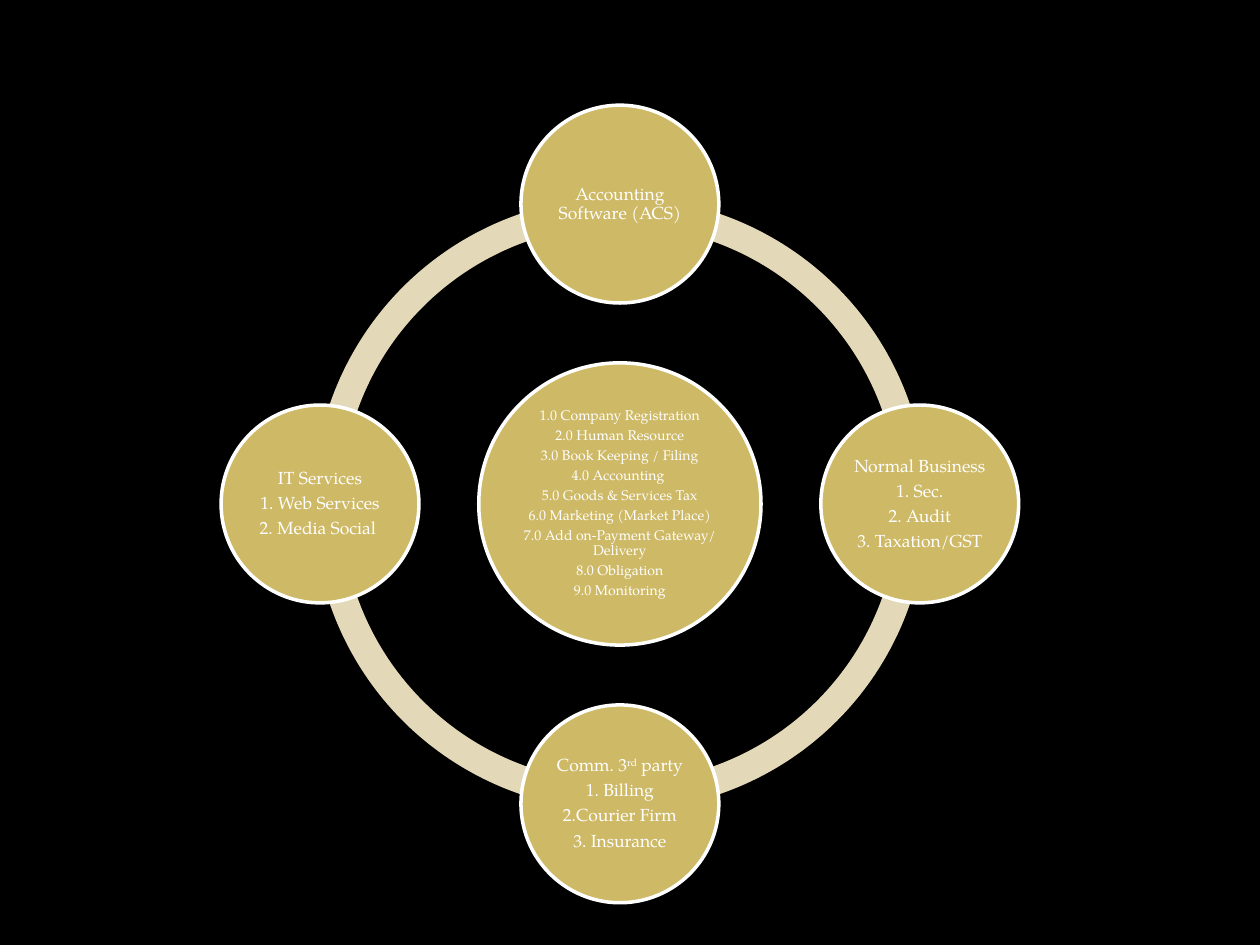
from math import cos, radians, sin

from pptx import Presentation
from pptx.dml.color import RGBColor
from pptx.enum.shapes import MSO_SHAPE
from pptx.enum.text import MSO_ANCHOR, PP_ALIGN
from pptx.util import Inches, Pt

OVAL, ARC = MSO_SHAPE.OVAL, MSO_SHAPE.BLOCK_ARC
MIDDLE, CENTER = MSO_ANCHOR.MIDDLE, PP_ALIGN.CENTER

COLORS = {"bg": "000000", "ring": "E3D9B8", "node": "CEB966", "white": "FFFFFF"}
FONT = "TeX Gyre Pagella"
CX, CY = 4.92, 4.0
ORBIT, RING_SIZE, RING_WIDTH = 2.38, 4.87, 0.046
HUB_SIZE, NODE_SIZE = 2.24, 1.57
QUARTER = 54

HUB_LINES = [
    "1.0 Company Registration",
    "2.0 Human Resource",
    "3.0 Book Keeping / Filing",
    "4.0 Accounting ",
    "5.0 Goods & Services Tax",
    "6.0 Marketing (Market Place)",
    "7.0 Add on-Payment Gateway/ Delivery",
    "8.0 Obligation",
    "9.0 Monitoring",
]
NODES = [
    (-90, ["Accounting Software (ACS)"]),
    (0, ["Normal Business", "1. Sec.", "2. Audit", "3. Taxation/GST"]),
    (90, [("Comm. 3", "rd", " party"), "1. Billing", "2.Courier Firm", "3. Insurance"]),
    (180, ["IT Services", "1. Web Services", "2. Media Social "]),
]


def rgb(name):
    return RGBColor.from_string(COLORS[name])


def set_attrs(obj, values):
    for name, value in values.items():
        setattr(obj, name, value)


def add_centered(s, kind, cx, cy, size, color):
    sp = s.shapes.add_shape(kind, Inches(cx - size / 2), Inches(cy - size / 2),
                            Inches(size), Inches(size))
    sp.shadow.inherit = False
    sp.fill.solid()
    sp.fill.fore_color.rgb = rgb(color)
    return sp


def add_arc(s, start):
    sp = add_centered(s, ARC, CX, CY, RING_SIZE, "ring")
    sp.line.fill.background()
    for i, value in enumerate((start, (start + QUARTER) % (4 * QUARTER), RING_WIDTH)):
        sp.adjustments[i] = value


def add_run(p, text, size, raised=False):
    r = p.add_run()
    r.text = text
    set_attrs(r.font, {"name": FONT, "size": Pt(size)})
    r.font.color.rgb = rgb("white")
    if raised:
        r.font._element.set("baseline", "30000")


def add_circle(s, cx, cy, size, lines, font_size):
    sp = add_centered(s, OVAL, cx, cy, size, "node")
    sp.line.color.rgb = rgb("white")
    sp.line.width = Pt(2)
    tf = sp.text_frame
    inset = Inches(0.01)
    set_attrs(tf, {"word_wrap": True, "vertical_anchor": MIDDLE,
                   "margin_left": inset, "margin_right": inset,
                   "margin_top": inset, "margin_bottom": inset})
    for i, line in enumerate(lines):
        p = tf.add_paragraph() if i else tf.paragraphs[0]
        set_attrs(p, {"alignment": CENTER, "line_spacing": 0.9,
                      "space_before": Pt(0), "space_after": Pt(font_size * 0.35)})
        parts = (line,) if isinstance(line, str) else line
        for j, text in enumerate(parts):
            add_run(p, text, font_size, raised=j == 1)


def main():
    prs = Presentation()
    set_attrs(prs, {"slide_width": Inches(10), "slide_height": Inches(7.5)})
    s = prs.slides.add_slide(prs.slide_layouts[6])
    s.background.fill.solid()
    s.background.fill.fore_color.rgb = rgb("bg")
    for i in range(4):
        add_arc(s, i * QUARTER)
    add_circle(s, CX, CY, HUB_SIZE, HUB_LINES, 8)
    for angle, lines in NODES:
        a = radians(angle)
        add_circle(s, CX + ORBIT * cos(a), CY + ORBIT * sin(a), NODE_SIZE, lines, 10)
    prs.save("out.pptx")


if __name__ == "__main__":
    main()
